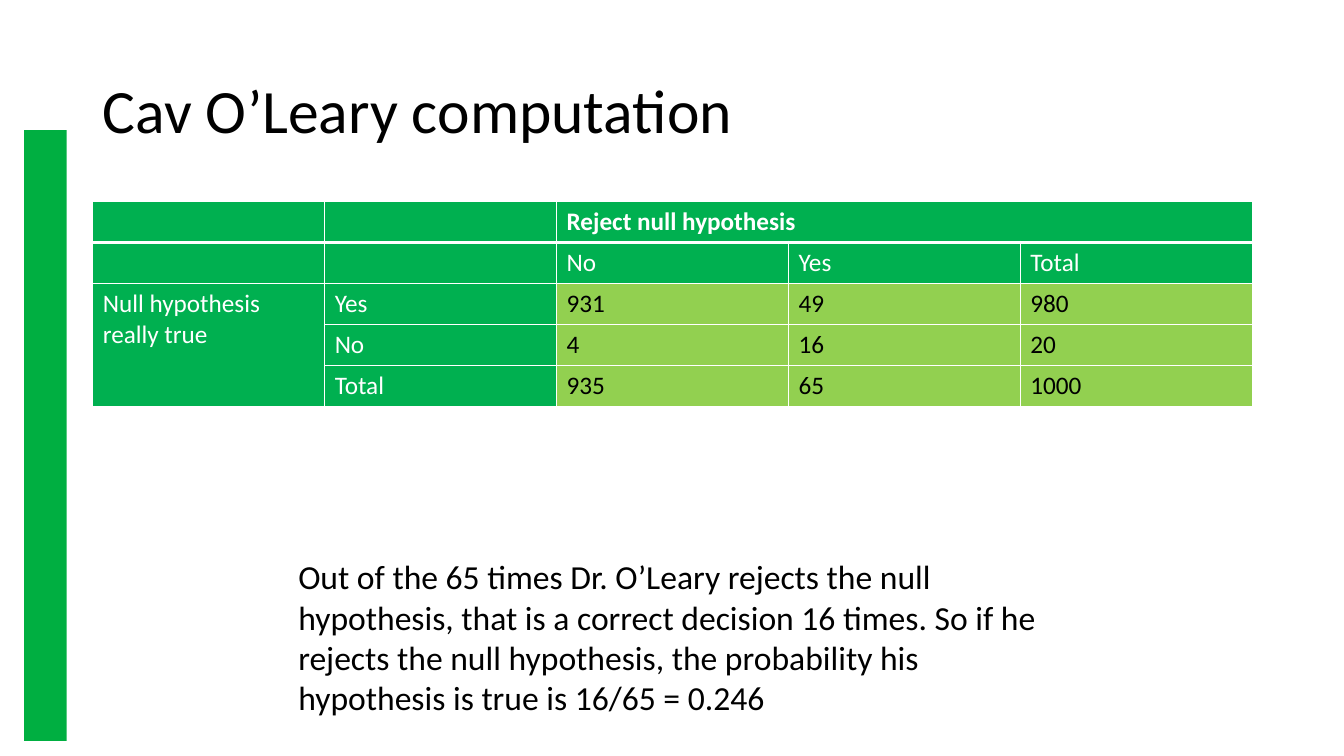
from dataclasses import dataclass

from lxml import etree
from pptx import Presentation
from pptx.dml.color import RGBColor
from pptx.enum.shapes import MSO_SHAPE as Shape
from pptx.enum.text import MSO_ANCHOR as Anchor, PP_ALIGN as Align
from pptx.oxml.ns import qn
from pptx.util import Inches, Pt

BAR_GREEN, HEAD_GREEN, VALUE_GREEN = "00AF41", "00B050", "92D050"
WHITE, BLACK = "FFFFFF", "000000"


@dataclass
class Box:
    left: float
    top: float
    width: float
    height: float

    def inches(self) -> tuple:
        return tuple(Inches(v) for v in (self.left, self.top, self.width, self.height))


def paint(color_format, color: str) -> None:
    color_format.rgb = RGBColor.from_string(color)


def write(frame, text: str, *, size: float, color: str = BLACK, bold: bool = False,
          anchor=Anchor.TOP, spacing: float = 1.0) -> None:
    frame.word_wrap = True
    frame.vertical_anchor = anchor
    paragraph = frame.paragraphs[0]
    paragraph.alignment = Align.LEFT
    paragraph.line_spacing = spacing
    run = paragraph.add_run()
    run.text = text
    run.font.name, run.font.size, run.font.bold = "Calibri", Pt(size), bold
    paint(run.font.color, color)


def add_panel(slide, box: Box, color: str):
    panel = slide.shapes.add_shape(Shape.RECTANGLE, *box.inches())
    panel.shadow.inherit = False
    panel.fill.solid()
    paint(panel.fill.fore_color, color)
    panel.line.fill.background()
    return panel


def set_borders(cell, widths: dict[str, float]) -> None:
    properties = cell._tc.get_or_add_tcPr()
    for side, width in widths.items():
        line = etree.SubElement(properties, qn(f"a:ln{side}"), w=str(Pt(width)))
        fill = etree.SubElement(line, qn("a:solidFill"))
        etree.SubElement(fill, qn("a:srgbClr"), val=WHITE)


def add_decision_table(slide, box: Box, rows: list[list[str]]) -> None:
    row_count, column_count = len(rows), len(rows[0])
    table = slide.shapes.add_table(row_count, column_count, *box.inches()).table
    for column in table.columns:
        column.width = Inches(box.width / column_count)
    for row in table.rows:
        row.height = Inches(box.height / row_count)
    for r, row in enumerate(rows):
        for c, text in enumerate(row):
            cell = table.cell(r, c)
            is_value = r >= 2 and c >= 2
            # The rule under the first row is heavier
            set_borders(cell, {"L": 1, "R": 1, "T": 3 if r == 1 else 1,
                               "B": 3 if r == 0 else 1})
            cell.fill.solid()
            paint(cell.fill.fore_color, VALUE_GREEN if is_value else HEAD_GREEN)
            if text:
                write(cell.text_frame, text, size=18, bold=r == 0,
                      color=BLACK if is_value else WHITE)
    table.cell(0, 2).merge(table.cell(0, 4))
    table.cell(2, 0).merge(table.cell(4, 0))


def main() -> None:
    prs = Presentation()
    prs.slide_width, prs.slide_height = Inches(13.33), Inches(7.5)
    slide = prs.slides.add_slide(prs.slide_layouts[5])

    # Side bar
    add_panel(slide, Box(0.24, 1.29, 0.42, 6.06), BAR_GREEN)

    # Title
    title = slide.shapes.title
    title.left, title.top, title.width, title.height = Box(0.92, 0.4, 11.5, 1.45).inches()
    write(title.text_frame, "Cav O’Leary computation", size=44,
          anchor=Anchor.MIDDLE, spacing=0.9)

    # Decisions against the truth
    add_decision_table(slide, Box(0.92, 2, 11.5, 2.03), [
        ["", "", "Reject null hypothesis", "", ""],
        ["", "", "No", "Yes", "Total"],
        ["Null hypothesis really true", "Yes", "931", "49", "980"],
        ["", "No", "4", "16", "20"],
        ["", "Total", "935", "65", "1000"],
    ])

    # Conclusion
    conclusion = add_panel(slide, Box(2.86, 5.47, 7.71, 1.72), WHITE)
    write(conclusion.text_frame,
          "Out of the 65 times Dr. O’Leary rejects the null hypothesis, that is a "
          "correct decision 16 times. So if he rejects the null hypothesis, the "
          "probability his hypothesis is true is 16/65 = 0.246", size=24)

    prs.save("out.pptx")


if __name__ == "__main__":
    main()
